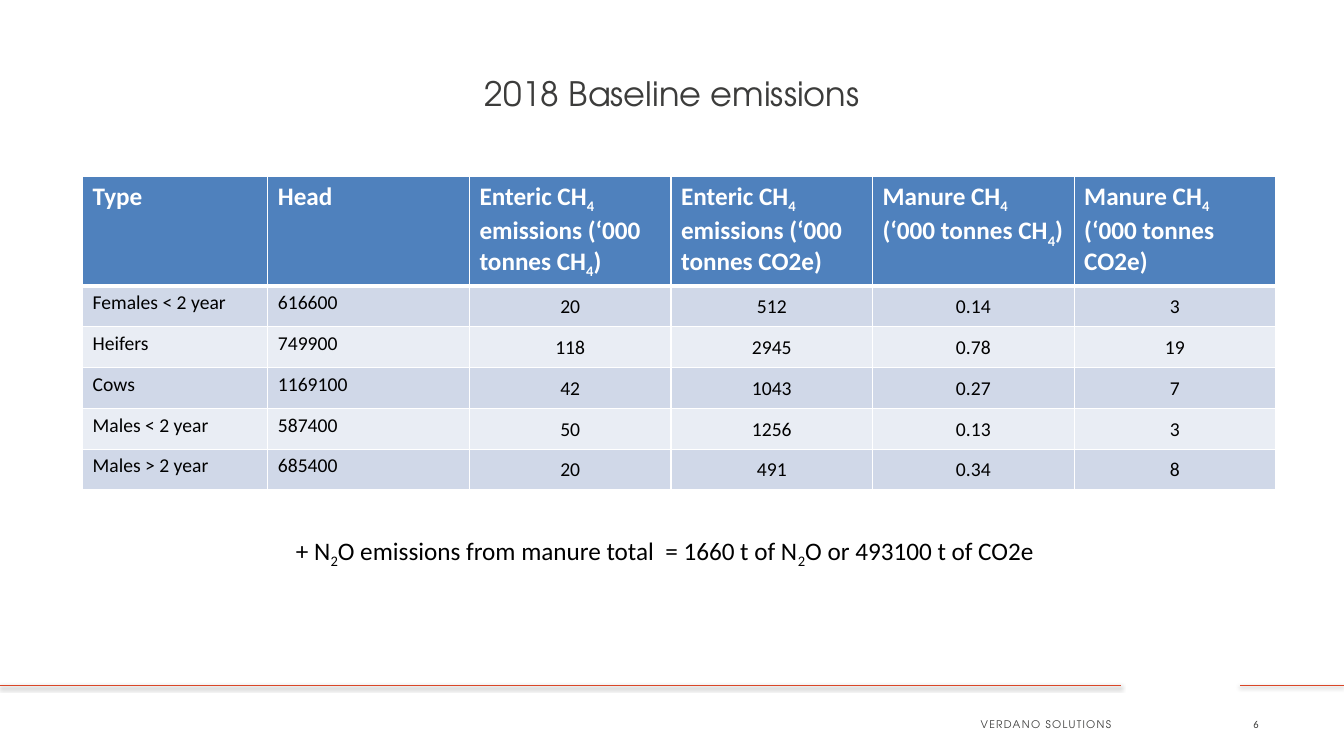
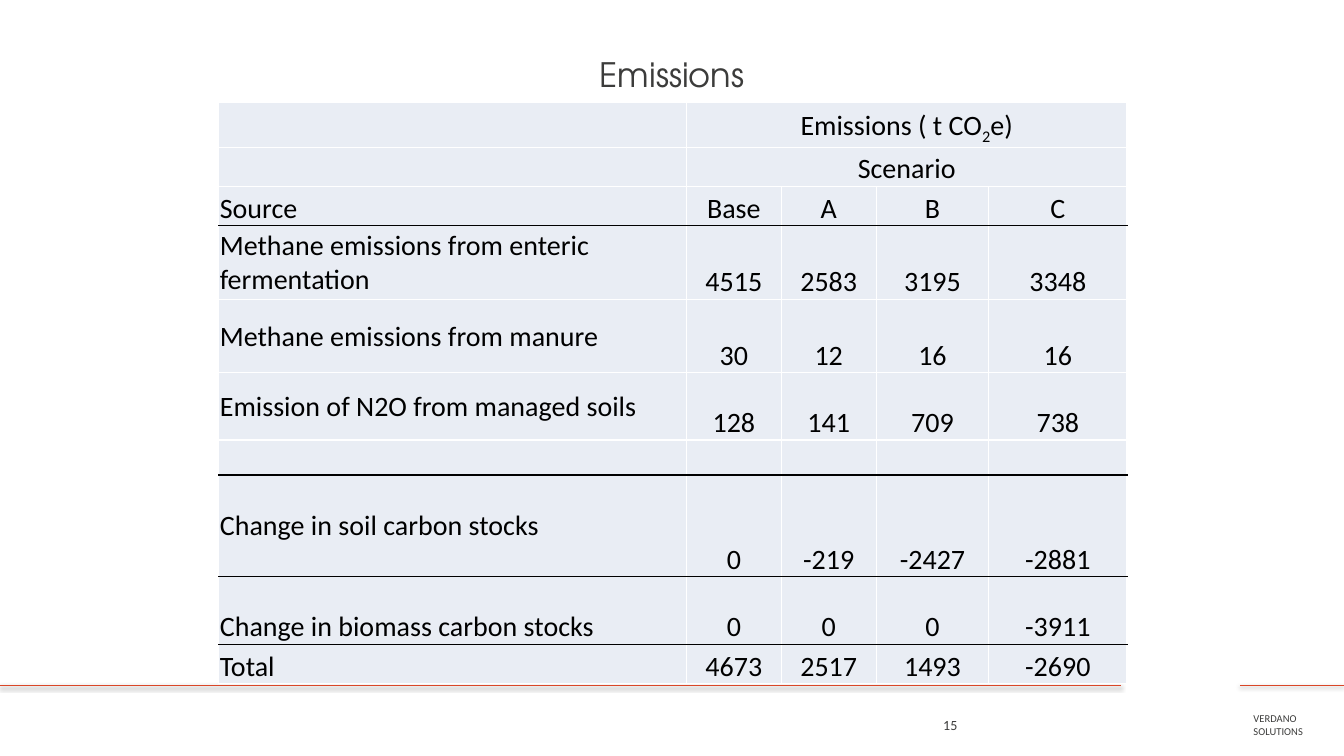
from dataclasses import dataclass, field

from lxml import etree
from pptx import Presentation
from pptx.dml.color import RGBColor
from pptx.enum.shapes import MSO_CONNECTOR
from pptx.enum.text import MSO_ANCHOR, PP_ALIGN
from pptx.oxml import parse_xml
from pptx.oxml.ns import nsdecls, qn
from pptx.slide import Slide
from pptx.table import Table, _Cell
from pptx.text.text import TextFrame
from pptx.util import Cm, Pt

LEFT, CENTER, RIGHT = PP_ALIGN.LEFT, PP_ALIGN.CENTER, PP_ALIGN.RIGHT
TOP, MIDDLE, BOTTOM = MSO_ANCHOR.TOP, MSO_ANCHOR.MIDDLE, MSO_ANCHOR.BOTTOM
STRAIGHT = MSO_CONNECTOR.STRAIGHT


@dataclass(frozen=True)
class Theme:
    heading_font: str = "TeX Gyre Adventor"
    body_font: str = "Calibri"
    ink: str = "3C3C3B"
    black: str = "000000"
    white: str = "FFFFFF"
    accent: str = "DA4627"
    header_fill: str = "4F81BD"
    dark_band: str = "D0D8E8"
    light_band: str = "E9EDF4"
    title_size: float = 24
    scenario_size: float = 20
    large_size: float = 18
    body_size: float = 14
    number_size: float = 10
    footer_size: float = 7.5


THEME = Theme()


@dataclass(frozen=True)
class Box:
    left: float
    top: float
    width: float
    height: float


@dataclass(frozen=True)
class TextStyle:
    size: float
    color: str = THEME.black
    font: str = THEME.body_font
    align: PP_ALIGN = LEFT
    anchor: MSO_ANCHOR = TOP
    bold: bool = False
    spacing: float = 0
    wrap: bool = True


@dataclass(frozen=True)
class Rule:
    color: str = THEME.white
    points: float = 1


@dataclass(frozen=True)
class CellStyle:
    text: TextStyle
    fill: str
    tight: bool = True
    above: Rule = field(default_factory=Rule)
    below: Rule = field(default_factory=Rule)
    bottom_margin: float = 0


TITLE = TextStyle(THEME.title_size, THEME.ink, THEME.heading_font, CENTER, MIDDLE)
FOOTER = TextStyle(THEME.footer_size, THEME.ink, anchor=MIDDLE)
COMPANY = TextStyle(THEME.footer_size, THEME.ink, THEME.heading_font, RIGHT, MIDDLE, spacing=0.9)
LARGE_NUMBER = TextStyle(THEME.number_size, THEME.ink, anchor=MIDDLE)
CAPTION = TextStyle(THEME.large_size, wrap=False)
COMPANY_NAME = "VERDANO SOLUTIONS"
FOOTER_TOP, FOOTER_HEIGHT = 17.75, 1.02
CORNER = Box(31.34, FOOTER_TOP, 2.08, FOOTER_HEIGHT)

BASELINE_HEADER = (
    "Type",
    "Head",
    "Enteric CH_4_ emissions (‘000 tonnes CH_4_)",
    "Enteric CH_4_ emissions (‘000 tonnes CO2e)",
    "Manure CH_4_\n(‘000 tonnes CH_4_)",
    "Manure CH_4_\n(‘000 tonnes CO2e)",
)
BASELINE_ROWS = (
    ("Females < 2 year", "616600", "20", "512", "0.14", "3"),
    ("Heifers", "749900", "118", "2945", "0.78", "19"),
    ("Cows", "1169100", "42", "1043", "0.27", "7"),
    ("Males < 2 year", "587400", "50", "1256", "0.13", "3"),
    ("Males > 2 year", "685400", "20", "491", "0.34", "8"),
)


@dataclass(frozen=True)
class SourceRow:
    height: float
    texts: tuple[str, ...]
    ruled: bool = False
    label_anchor: MSO_ANCHOR = BOTTOM
    label_lift: float = 0
    spanned: bool = False


BLANK = ("",) * 5
SOURCE_ROWS = (
    SourceRow(1.14, ("", "Emissions ( t CO_2_e)", "", "", ""), spanned=True),
    SourceRow(0.99, ("", "Scenario", "", "", ""), spanned=True),
    SourceRow(0.99, ("Source", "Base", "A", "B", "C"), ruled=True),
    SourceRow(1.85, ("Methane emissions from enteric fermentation", "4515", "2583", "3195", "3348"),
              label_anchor=MIDDLE),
    SourceRow(1.85, ("Methane emissions from manure", "30", "12", "16", "16"), label_anchor=MIDDLE),
    SourceRow(1.7, ("Emission of N2O from managed soils", "128", "141", "709", "738"), label_anchor=MIDDLE),
    SourceRow(0.86, BLANK, ruled=True),
    SourceRow(2.57, ("Change in soil carbon stocks", "0", "-219", "-2427", "-2881"),
              ruled=True, label_lift=0.86),
    SourceRow(1.7, ("Change in biomass carbon stocks", "0", "0", "0", "-3911"), ruled=True),
    SourceRow(0.99, ("Total", "4673", "2517", "1493", "-2690")),
)


def write_text(frame: TextFrame, text: str, style: TextStyle) -> None:
    for index, line in enumerate(text.split("\n")):
        paragraph = frame.add_paragraph() if index else frame.paragraphs[0]
        paragraph.alignment = style.align
        font = paragraph.font
        font.name, font.size, font.bold = style.font, Pt(style.size), style.bold
        font.color.rgb = RGBColor.from_string(style.color)
        for position, piece in enumerate(line.split("_")):
            if not piece:
                continue
            run = paragraph.add_run()
            run.text = piece
            properties = run._r.get_or_add_rPr()
            if position % 2:
                properties.set("baseline", "-25000")
            if style.spacing:
                properties.set("spc", str(round(style.spacing * 100)))


def add_text(slide: Slide, box: Box, text: str, style: TextStyle) -> None:
    frame = slide.shapes.add_textbox(Cm(box.left), Cm(box.top), Cm(box.width), Cm(box.height)).text_frame
    frame.word_wrap = style.wrap
    frame.vertical_anchor = style.anchor
    write_text(frame, text, style)


def add_footer_lines(slide: Slide) -> None:
    for start, end in ((33.87, 31.24), (28.24, 0)):
        line = slide.shapes.add_connector(STRAIGHT, Cm(start), Cm(17.27), Cm(end), Cm(17.27))
        line.line.color.rgb = RGBColor.from_string(THEME.accent)
        line.line.width = Pt(0.75)
        line._element.spPr.append(parse_xml(
            f'<a:effectLst {nsdecls("a")}>'
            f'<a:outerShdw blurRad="{Pt(3.1)}" dist="{Pt(1.6)}" dir="5400000" rotWithShape="0">'
            f'<a:srgbClr val="{THEME.black}"><a:alpha val="38000"/></a:srgbClr>'
            '</a:outerShdw></a:effectLst>'))


def add_border(cell: _Cell, side: str, rule: Rule) -> None:
    line = etree.SubElement(cell._tc.get_or_add_tcPr(), qn(f"a:ln{side}"), w=str(Pt(rule.points)))
    fill = etree.SubElement(line, qn("a:solidFill"))
    etree.SubElement(fill, qn("a:srgbClr"), val=rule.color)


def fill_cell(cell: _Cell, text: str, style: CellStyle) -> None:
    for side, rule in (("L", Rule()), ("R", Rule()), ("T", style.above), ("B", style.below)):
        add_border(cell, side, rule)
    cell.fill.solid()
    cell.fill.fore_color.rgb = RGBColor.from_string(style.fill)
    cell.vertical_anchor = style.text.anchor
    if style.tight:
        cell.margin_left = cell.margin_right = cell.margin_top = Cm(0.03)
        cell.margin_bottom = Cm(style.bottom_margin)
    write_text(cell.text_frame, text, style.text)


def add_grid(slide: Slide, left: float, top: float, widths: tuple[float, ...],
             heights: tuple[float, ...], has_header: bool) -> Table:
    table = slide.shapes.add_table(len(heights), len(widths), Cm(left), Cm(top),
                                   Cm(sum(widths)), Cm(sum(heights))).table
    table.first_row = has_header
    table.horz_banding = False
    for column, width in zip(table.columns, widths):
        column.width = Cm(width)
    for row, height in zip(table.rows, heights):
        row.height = Cm(height)
    return table


def add_baseline_table(slide: Slide) -> None:
    table = add_grid(slide, 2.08, 4.45, (4.67,) + (5.08,) * 5, (2.74,) + (1.03,) * 5, True)
    heading = CellStyle(TextStyle(THEME.large_size, THEME.white, bold=True), THEME.header_fill,
                        tight=False, below=Rule(points=3))
    for column, text in enumerate(BASELINE_HEADER):
        fill_cell(table.cell(0, column), text, heading)
    label = TextStyle(THEME.body_size)
    value = TextStyle(THEME.body_size, align=CENTER, anchor=MIDDLE)
    for row, texts in enumerate(BASELINE_ROWS, start=1):
        band = THEME.dark_band if row % 2 else THEME.light_band
        above = Rule(points=3 if row == 1 else 1)
        for column, text in enumerate(texts):
            is_value = column >= 2
            style = CellStyle(value if is_value else label, band, tight=is_value, above=above)
            fill_cell(table.cell(row, column), text, style)


def add_scenario_table(slide: Slide) -> None:
    heights = tuple(source.height for source in SOURCE_ROWS)
    table = add_grid(slide, 5.51, 2.57, (11.79, 2.39, 2.39, 2.84, 3.48), heights, False)
    value = TextStyle(THEME.scenario_size, align=CENTER, anchor=BOTTOM)
    above = Rule()
    for row, source in enumerate(SOURCE_ROWS):
        below = Rule(THEME.black if source.ruled else THEME.white)
        label = TextStyle(THEME.scenario_size, anchor=source.label_anchor)
        for column, text in enumerate(source.texts):
            style = CellStyle(value if column else label, THEME.light_band, above=above, below=below,
                              bottom_margin=0 if column else source.label_lift)
            fill_cell(table.cell(row, column), text, style)
        if source.spanned:
            table.cell(row, 1).merge(table.cell(row, 4))
        above = below


def add_titled_slide(deck: Presentation, title: str, title_box: Box) -> Slide:
    slide = deck.slides.add_slide(deck.slide_layouts[6])
    add_footer_lines(slide)
    add_text(slide, title_box, title, TITLE)
    return slide


def main() -> None:
    deck = Presentation()
    deck.slide_width, deck.slide_height = Cm(33.87), Cm(19.05)

    baseline = add_titled_slide(deck, "2018 Baseline emissions", Box(1.7, 0.76, 30.48, 3.18))
    add_baseline_table(baseline)
    add_text(baseline, Box(17.53, FOOTER_TOP, 10.72, FOOTER_HEIGHT), COMPANY_NAME, COMPANY)
    add_text(baseline, CORNER, "6", FOOTER)
    add_text(baseline, Box(7.21, 13.36, 19.38, 1.02),
             "+ N_2_O emissions from manure total  = 1660 t of N_2_O or 493100 t of CO2e", CAPTION)

    scenarios = add_titled_slide(deck, "Emissions", Box(5.51, 0.28, 22.86, 3.18))
    add_text(scenarios, CORNER, COMPANY_NAME, FOOTER)
    add_text(scenarios, Box(23.52, FOOTER_TOP, 1.55, FOOTER_HEIGHT), "15", LARGE_NUMBER)
    add_scenario_table(scenarios)

    deck.save("out.pptx")


if __name__ == "__main__":
    main()
